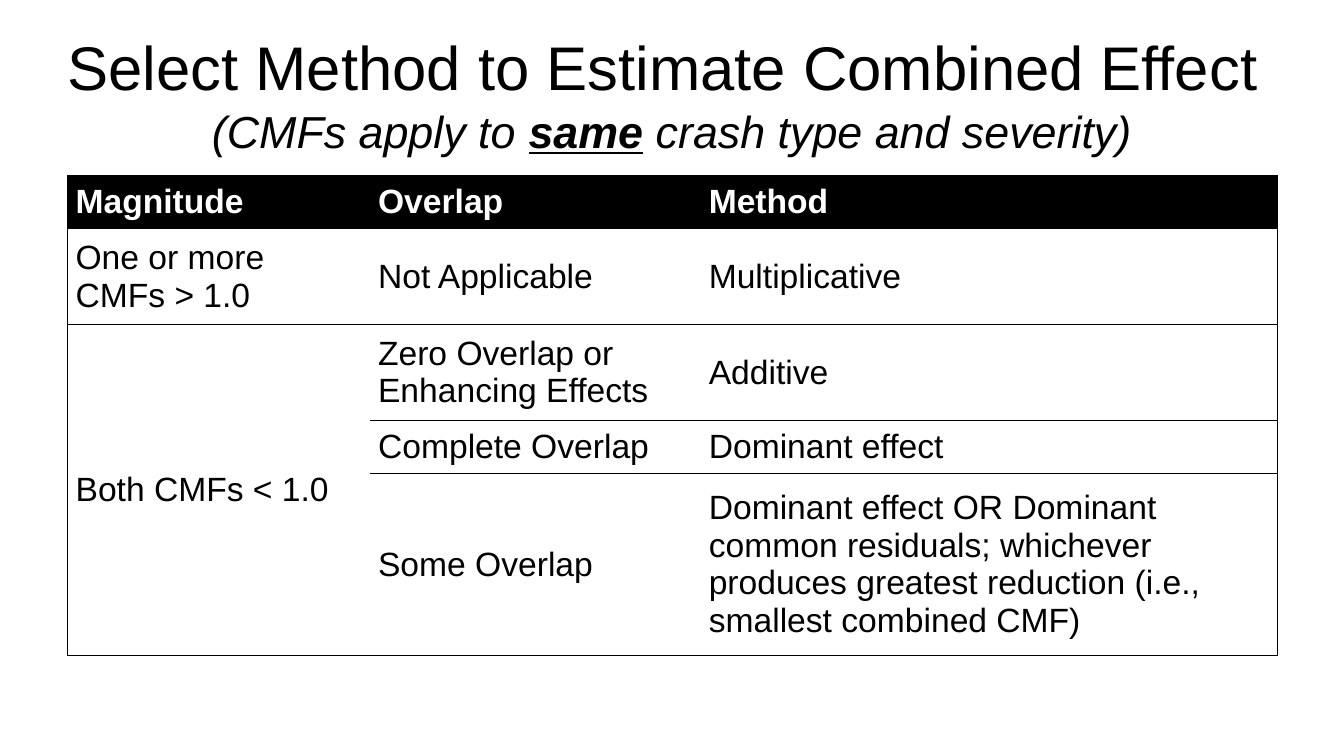
from lxml import etree
from pptx import Presentation
from pptx.dml.color import RGBColor
from pptx.enum import text
from pptx.oxml import ns
from pptx.util import Inches, Pt

BLACK = RGBColor(0, 0, 0)
WHITE = RGBColor(255, 255, 255)
FONT = "Arial"


def set_borders(cell, visible):
    """Draw the sides named in visible (of L, R, T, B) and clear the others."""
    properties = cell._tc.get_or_add_tcPr()
    for position, side in enumerate("LRTB"):
        line = etree.Element(ns.qn("a:ln" + side), w=str(Pt(0.75)))
        if side in visible:
            fill = etree.SubElement(line, ns.qn("a:solidFill"))
            etree.SubElement(fill, ns.qn("a:srgbClr"), val=str(BLACK))
        else:
            etree.SubElement(line, ns.qn("a:noFill"))
        properties.insert(position, line)


presentation = Presentation()
presentation.slide_width = Inches(13.33)
presentation.slide_height = Inches(7.5)
slide = presentation.slides.add_slide(presentation.slide_layouts[6])

# Title
title = slide.shapes.add_textbox(Inches(0), Inches(0.3), Inches(13.33), Inches(1.25)).text_frame
title.word_wrap = True
title.vertical_anchor = text.MSO_ANCHOR.MIDDLE
heading = title.paragraphs[0]
heading.alignment = text.PP_ALIGN.CENTER
heading.text = "Select Method to Estimate Combined Effect \v(CMFs apply to "
for words in ("same", " crash type and severity)"):
    heading.add_run().text = words
main_line, *subtitle = heading.runs
for run in heading.runs:
    run.font.name = FONT
    run.font.color.rgb = BLACK
main_line.font.size = Pt(44)
for run in subtitle:
    run.font.size = Pt(32)
    run.font.italic = True
subtitle[1].font.bold = True
subtitle[1].font.underline = True

# Table of methods
COLUMN_WIDTHS = (3, 3.28, 5.72)
ROW_HEIGHTS = (0.53, 0.95, 0.95, 0.53, 1.8)
METHODS = (
    ("Magnitude", "Overlap", "Method"),
    ("One or more CMFs > 1.0", "Not Applicable", "Multiplicative"),
    ("Both CMFs < 1.0", "Zero Overlap or\nEnhancing Effects", "Additive"),
    ("", "Complete Overlap", "Dominant effect"),
    ("", "Some Overlap",
     "Dominant effect OR Dominant common residuals; whichever produces "
     "greatest reduction (i.e., smallest combined CMF)"),
)
last_row = len(METHODS) - 1
last_column = len(COLUMN_WIDTHS) - 1
table = slide.shapes.add_table(
    len(METHODS), len(COLUMN_WIDTHS), Inches(0.67), Inches(1.74),
    Inches(sum(COLUMN_WIDTHS)), Inches(sum(ROW_HEIGHTS))).table
table.horz_banding = False
for column, width in zip(table.columns, COLUMN_WIDTHS):
    column.width = Inches(width)
for row, height in zip(table.rows, ROW_HEIGHTS):
    row.height = Inches(height)
table.cell(2, 0).merge(table.cell(last_row, 0))

for r, entries in enumerate(METHODS):
    for c, entry in enumerate(entries):
        cell = table.cell(r, c)
        cell.vertical_anchor = text.MSO_ANCHOR.MIDDLE
        cell.margin_left = cell.margin_right = Inches(0.08)
        cell.fill.solid()
        cell.fill.fore_color.rgb = BLACK if r == 0 else WHITE
        sides = "" if cell.is_spanned else "T"
        if not cell.is_spanned or r == last_row:
            sides += "B"
        if c == 0:
            sides += "L"
        if c == last_column:
            sides += "R"
        set_borders(cell, sides)
        cell.text_frame.text = entry
        for paragraph in cell.text_frame.paragraphs:
            for run in paragraph.runs:
                run.font.name = FONT
                run.font.size = Pt(24)
                run.font.bold = r == 0
                run.font.color.rgb = WHITE if r == 0 else BLACK

presentation.save("out.pptx")
